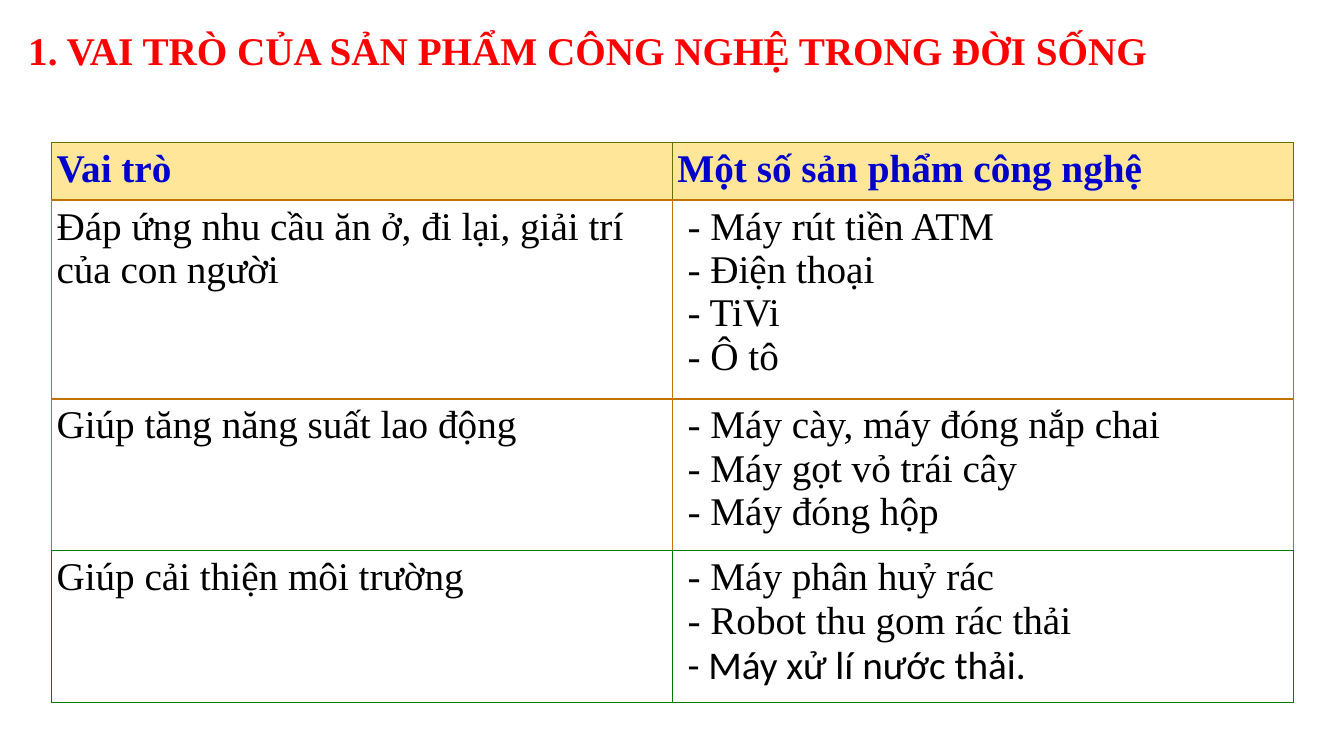
from dataclasses import dataclass
from lxml.etree import SubElement
from pptx import Presentation
from pptx.dml.color import RGBColor
from pptx.enum.text import MSO_ANCHOR, MSO_AUTO_SIZE, PP_ALIGN
from pptx.oxml.ns import qn
from pptx.slide import Slide
from pptx.table import Table, _Cell
from pptx.text.text import TextFrame
from pptx.util import Inches, Pt

RED = RGBColor(0xFF, 0x00, 0x00)
BLUE = RGBColor(0x00, 0x00, 0xCC)
BLACK = RGBColor(0x00, 0x00, 0x00)
CREAM = RGBColor(0xFF, 0xE6, 0x99)
OLIVE = RGBColor(0x60, 0x72, 0x00)
AMBER = RGBColor(0xC0, 0x73, 0x00)
GREEN = RGBColor(0x00, 0x79, 0x00)

SERIF = "Times New Roman"
SANS = "Calibri"
SIZE = Pt(28)
EDGE = Pt(1)
INSET = Inches(0.05)
INDENT = Inches(0.1)

WIDTH, HEIGHT = Inches(13.33), Inches(7.5)
COL, ROW = WIDTH / 100, HEIGHT / 100


@dataclass(frozen=True)
class Line:
    text: str
    color: RGBColor = BLACK
    bold: bool = False
    font: str = SERIF
    indent: int = 0


@dataclass(frozen=True)
class Band:
    role: Line
    items: list[Line]
    rows: float
    border: RGBColor
    bottom: RGBColor
    fill: RGBColor | None = None


def item(text: str, font: str = SERIF) -> Line:
    return Line(f"- {text}", font=font, indent=INDENT)


TITLE = Line("1. VAI TRÒ CỦA SẢN PHẨM CÔNG NGHỆ TRONG ĐỜI SỐNG", RED, True)
BANDS = [
    Band(Line("Vai trò", BLUE, True),
         [Line("Một số sản phẩm công nghệ", BLUE, True)],
         7.67, OLIVE, AMBER, CREAM),
    Band(Line("Đáp ứng nhu cầu ăn ở, đi lại, giải trí của con người"),
         [item("Máy rút tiền ATM"), item("Điện thoại"), item("TiVi"), item("Ô tô")],
         26.3, AMBER, AMBER),
    Band(Line("Giúp tăng năng suất lao động"),
         [item("Máy cày, máy đóng nắp chai"), item("Máy gọt vỏ trái cây"),
          item("Máy đóng hộp")],
         20.1, AMBER, GREEN),
    Band(Line("Giúp cải thiện môi trường"),
         [item("Máy phân huỷ rác"), item("Robot thu gom rác thải"),
          item("Máy xử lí nước thải.", SANS)],
         20.1, GREEN, GREEN),
]


def across(cols: float) -> int:
    return round(cols * COL)


def down(rows: float) -> int:
    return round(rows * ROW)


def write(frame: TextFrame, lines: list[Line]) -> None:
    for index, line in enumerate(lines):
        para = frame.add_paragraph() if index else frame.paragraphs[0]
        para.alignment = PP_ALIGN.LEFT
        if line.indent:
            para._p.get_or_add_pPr().set("marL", str(line.indent))
        run = para.add_run()
        run.text = line.text
        run.font.name = line.font
        run.font.size = SIZE
        run.font.bold = line.bold
        run.font.color.rgb = line.color


def outline(cell: _Cell, band: Band) -> None:
    props = cell._tc.get_or_add_tcPr()
    for side in "LRTB":
        color = band.bottom if side == "B" else band.border
        edge = SubElement(props, qn(f"a:ln{side}"), w=str(EDGE))
        solid = SubElement(edge, qn("a:solidFill"))
        SubElement(solid, qn("a:srgbClr"), val=str(color))


def draw_cell(cell: _Cell, lines: list[Line], band: Band) -> None:
    cell.margin_left = cell.margin_right = INSET
    cell.margin_top = cell.margin_bottom = INSET
    outline(cell, band)
    if band.fill is None:
        cell.fill.background()
    else:
        cell.fill.solid()
        cell.fill.fore_color.rgb = band.fill
    write(cell.text_frame, lines)


def draw_title(slide: Slide) -> None:
    title = slide.shapes.title
    title.left, title.top = across(1.35), down(2.8)
    title.width, title.height = across(89.6), down(7.6)
    frame = title.text_frame
    frame.word_wrap = True
    frame.auto_size = MSO_AUTO_SIZE.NONE
    frame.vertical_anchor = MSO_ANCHOR.TOP
    write(frame, [TITLE])


def draw_table(slide: Slide) -> None:
    height = sum(band.rows for band in BANDS)
    table: Table = slide.shapes.add_table(
        len(BANDS), 2, across(3.83), down(18.8), across(92.4), down(height)
    ).table
    table.first_row = table.horz_banding = False
    for row, band in enumerate(BANDS):
        table.rows[row].height = down(band.rows)
        draw_cell(table.cell(row, 0), [band.role], band)
        draw_cell(table.cell(row, 1), band.items, band)


def main() -> None:
    deck = Presentation()
    deck.slide_width, deck.slide_height = WIDTH, HEIGHT
    slide = deck.slides.add_slide(deck.slide_layouts.get_by_name("Title Only"))
    draw_title(slide)
    draw_table(slide)
    deck.save("out.pptx")


if __name__ == "__main__":
    main()
